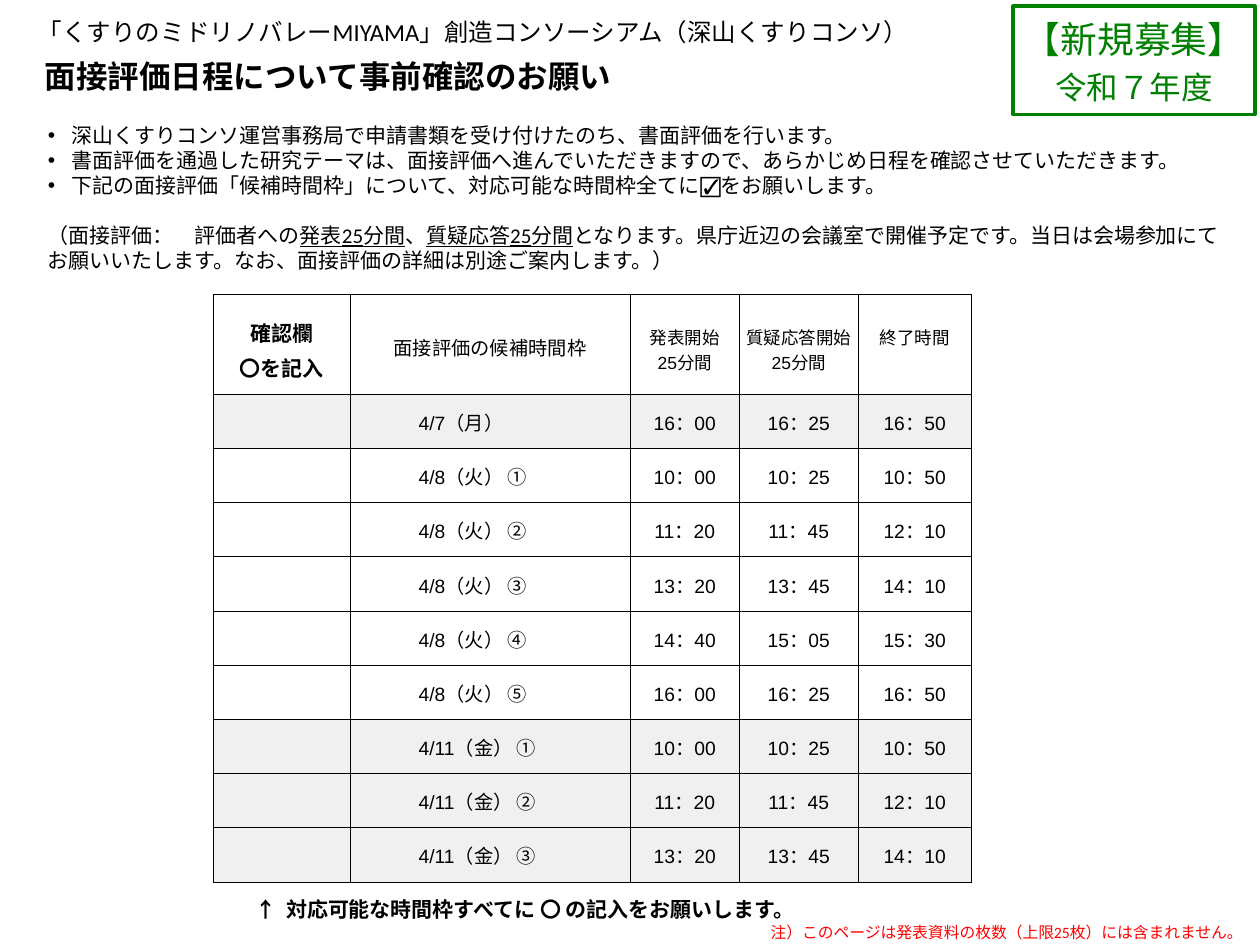
"""Build the interview schedule confirmation slide."""
from lxml.etree import SubElement
from pptx import Presentation
from pptx.dml.color import RGBColor
from pptx.enum.shapes import MSO_SHAPE
from pptx.enum.text import MSO_ANCHOR, MSO_AUTO_SIZE, PP_ALIGN
from pptx.oxml.ns import qn
from pptx.util import Inches, Pt

BLACK = RGBColor(0x00, 0x00, 0x00)
GREEN = RGBColor(0x00, 0x80, 0x00)
RED = RGBColor(0xFF, 0x00, 0x00)
GRAY = RGBColor(0xF0, 0xF0, 0xF0)


def add_run(paragraph, text, color=BLACK, **formats):
    run = paragraph.add_run()
    run.text = text
    run.font.color.rgb = color
    for name, value in formats.items():
        setattr(run.font, name, value)


def set_frame(shape, left, top, width, height, **formats):
    shape.left, shape.top = Inches(left), Inches(top)
    shape.width, shape.height = Inches(width), Inches(height)
    frame = shape.text_frame
    settings = {"word_wrap": True, "auto_size": MSO_AUTO_SIZE.NONE,
                "vertical_anchor": MSO_ANCHOR.TOP} | formats
    for name, value in settings.items():
        setattr(frame, name, value)
    return frame


presentation = Presentation()
presentation.slide_width = Inches(10)
presentation.slide_height = Inches(7.5)
slide = presentation.slides.add_slide(presentation.slide_layouts[1])
title, body = slide.placeholders

title_frame = set_frame(title, 0.2, 0.05, 7.8, 0.78, vertical_anchor=MSO_ANCHOR.MIDDLE)
organizer = title_frame.paragraphs[0]
organizer.alignment = PP_ALIGN.LEFT
organizer.space_after = Pt(6)
add_run(organizer, "「くすりのミドリノバレーMIYAMA」創造コンソーシアム（深山くすりコンソ）",
        size=Pt(14), name="Calibri")
heading = title_frame.add_paragraph()
heading.alignment = PP_ALIGN.LEFT
add_run(heading, " 面接評価日程について事前確認のお願い", size=Pt(18), name="Calibri", bold=True)

body_frame = set_frame(body, 0.28, 0.92, 9.53, 1.31)
BULLETS = [
    "深山くすりコンソ運営事務局で申請書類を受け付けたのち、書面評価を行います。",
    "書面評価を通過した研究テーマは、面接評価へ進んでいただきますので、あらかじめ日程を確認させていただきます。",
    "下記の面接評価「候補時間枠」について、対応可能な時間枠全てに☑をお願いします。",
]
for index, text in enumerate(BULLETS):
    paragraph = body_frame.add_paragraph() if index else body_frame.paragraphs[0]
    paragraph.space_before = Pt(0)
    properties = paragraph._p.get_or_add_pPr()
    properties.set("marL", str(Inches(0.19)))
    properties.set("indent", str(Inches(-0.19)))
    SubElement(properties, qn("a:buFont"), typeface="Arial")
    SubElement(properties, qn("a:buChar"), char="•")
    add_run(paragraph, text, size=Pt(12), name="Calibri")

details = body_frame.add_paragraph()
details.space_before = Pt(14)
properties = details._p.get_or_add_pPr()
properties.set("marL", "0")
properties.set("indent", "0")
SubElement(properties, qn("a:buNone"))
DETAILS = [
    ("（面接評価：　評価者への", False),
    ("発表25分間", True),
    ("、", False),
    ("質疑応答25分間", True),
    ("となります。県庁近辺の会議室で開催予定です。当日は会場参加にてお願いいたします。"
     "なお、面接評価の詳細は別途ご案内します。）", False),
]
for text, underline in DETAILS:
    add_run(details, text, size=Pt(12), name="Calibri", underline=underline)

HEADERS = [
    (["確認欄", "〇を記入"], 12, 20, 0.04),
    (["面接評価の候補時間枠"], 11, None, 0.04),
    (["発表開始", "25分間"], 10, 14, 0.24),
    (["質疑応答開始", "25分間"], 10, 14, 0.24),
    (["終了時間"], 10, 14, 0.24),
]
SLOTS = [
    ("4/7（月）", 16, 0, True),
    ("4/8（火） ①", 10, 0, False),
    ("4/8（火） ②", 11, 20, False),
    ("4/8（火） ③", 13, 20, False),
    ("4/8（火） ④", 14, 40, False),
    ("4/8（火） ⑤", 16, 0, False),
    ("4/11（金） ①", 10, 0, True),
    ("4/11（金） ②", 11, 20, True),
    ("4/11（金） ③", 13, 20, True),
]
table = slide.shapes.add_table(len(SLOTS) + 1, len(HEADERS), Inches(1.69), Inches(2.34),
                               Inches(6.02), Inches(4.66)).table
table.first_row = table.horz_banding = False
for column, width in zip(table.columns, [1.09, 2.22, 0.87, 0.94, 0.9]):
    column.width = Inches(width)
for index, row in enumerate(table.rows):
    row.height = Inches(0.43 if index else 0.79)

for cell in table.iter_cells():
    cell.margin_left = cell.margin_right = cell.margin_top = Inches(0.01)
    cell.margin_bottom = Inches(0)
    cell.vertical_anchor = MSO_ANCHOR.MIDDLE
    cell_properties = cell._tc.get_or_add_tcPr()
    for side in ("a:lnL", "a:lnR", "a:lnT", "a:lnB"):
        border = SubElement(cell_properties, qn(side), w=str(Pt(0.5)))
        border_fill = SubElement(border, qn("a:solidFill"))
        SubElement(border_fill, qn("a:srgbClr"), val=str(BLACK))
    cell.fill.background()

for column, (lines, size, spacing, top) in enumerate(HEADERS):
    cell = table.cell(0, column)
    cell.margin_top = Inches(top)
    cell.vertical_anchor = MSO_ANCHOR.MIDDLE if column < 2 else MSO_ANCHOR.TOP
    for index, text in enumerate(lines):
        paragraph = cell.text_frame.add_paragraph() if index else cell.text_frame.paragraphs[0]
        paragraph.alignment = PP_ALIGN.CENTER
        if spacing:
            paragraph.line_spacing = Pt(spacing)
        add_run(paragraph, text, size=Pt(size), name="Arial", bold=column == 0)

for row, (date, hour, minute, shaded) in enumerate(SLOTS, start=1):
    start = hour * 60 + minute
    times = [f"{time // 60}：{time % 60:02}" for time in (start, start + 25, start + 50)]
    for column, text in enumerate(["", f" {date}", *times]):
        cell = table.cell(row, column)
        if shaded:
            cell.fill.solid()
            cell.fill.fore_color.rgb = GRAY
        if column == 1:
            cell.margin_left = Inches(0.5)
        if text:
            paragraph = cell.text_frame.paragraphs[0]
            paragraph.alignment = PP_ALIGN.LEFT if column == 1 else PP_ALIGN.CENTER
            add_run(paragraph, text, size=Pt(11), name="Arial")

instruction = slide.shapes.add_textbox(0, 0, 0, 0)
instruction_frame = set_frame(instruction, 1.93, 7.07, 4.41, 0.3)
add_run(instruction_frame.paragraphs[0], "↑  対応可能な時間枠すべてに 〇 の記入をお願いします。",
        size=Pt(12), name="Calibri", bold=True)

badge = slide.shapes.add_shape(MSO_SHAPE.RECTANGLE, 0, 0, 0, 0)
badge.shadow.inherit = False
badge.fill.background()
badge.line.color.rgb = GREEN
badge.line.width = Pt(2)
badge_frame = set_frame(badge, 8.04, 0.05, 1.92, 0.86,
                        margin_left=Inches(0.04), margin_right=Inches(0.04),
                        margin_top=Inches(0.04), margin_bottom=Inches(0.04),
                        vertical_anchor=MSO_ANCHOR.MIDDLE)
for index, (text, size) in enumerate([("【新規募集】", 21), ("令和７年度", 18)]):
    paragraph = badge_frame.add_paragraph() if index else badge_frame.paragraphs[0]
    paragraph.alignment = PP_ALIGN.CENTER
    paragraph.line_spacing = Pt(26)
    add_run(paragraph, text, GREEN, size=Pt(size), name="Noto Sans CJK JP")

note = slide.shapes.add_textbox(0, 0, 0, 0)
note_frame = set_frame(note, 5.87, 7.27, 4.09, 0.2, margin_bottom=Inches(0),
                       vertical_anchor=MSO_ANCHOR.BOTTOM)
note_frame.paragraphs[0].alignment = PP_ALIGN.RIGHT
add_run(note_frame.paragraphs[0], "注）このページは発表資料の枚数（上限25枚）には含まれません。", RED,
        size=Pt(9), name="Calibri")

presentation.save("out.pptx")
